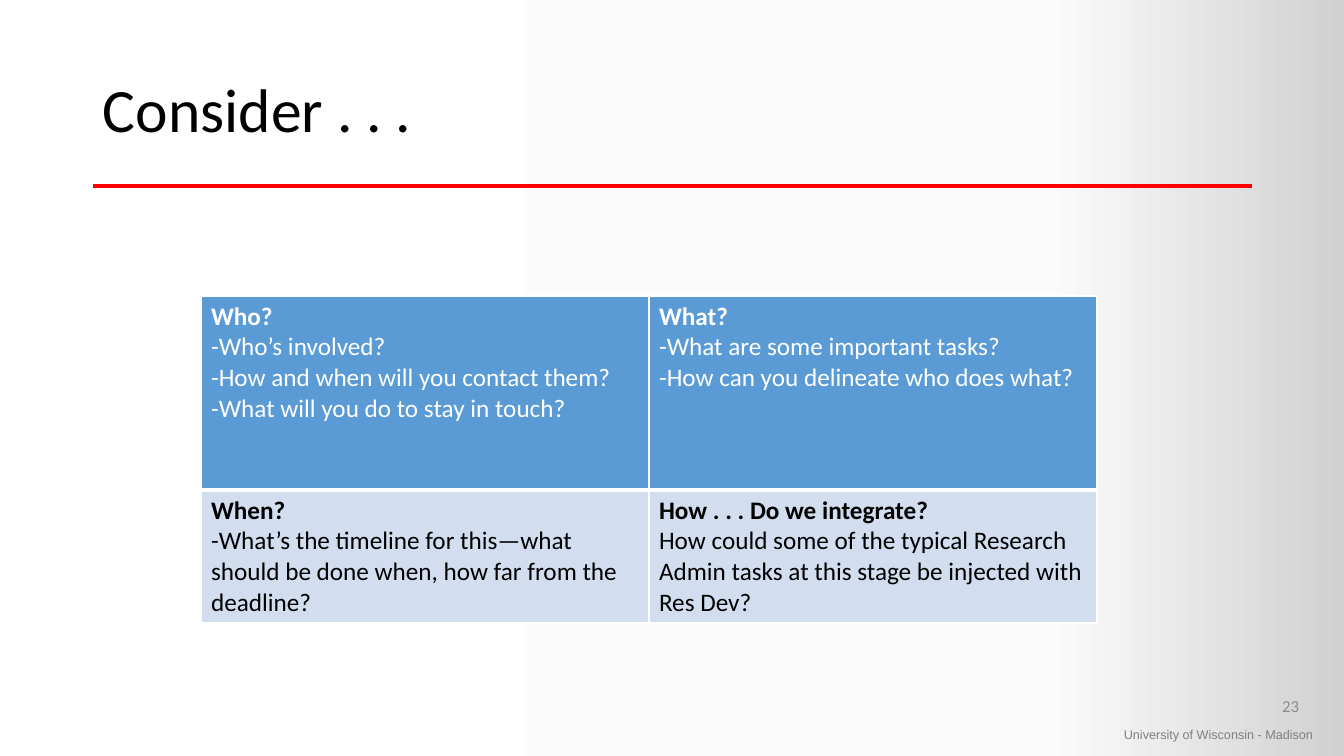
from dataclasses import dataclass

from lxml import etree
from pptx import Presentation
from pptx.dml.color import RGBColor
from pptx.enum.shapes import MSO_CONNECTOR as Connector
from pptx.enum.text import MSO_ANCHOR as Anchor, PP_ALIGN as Align
from pptx.oxml.ns import qn
from pptx.util import Emu, Pt

EMU_PER_PX = 12192000 / 1344


def px(length):
    return Emu(round(length * EMU_PER_PX))


@dataclass(frozen=True)
class Theme:
    black: str = "000000"
    white: str = "FFFFFF"
    red: str = "FF0000"
    footer_grey: str = "808080"
    number_grey: str = "8C8C8C"
    row_fills: tuple = ("5B9BD5", "D2DEEF")
    row_inks: tuple = ("FFFFFF", "000000")
    backdrop: tuple = ((0, "FFFFFF"), (78, "FBFBFB"), (100, "D1D1D1"))
    body_font: str = "Calibri"
    footer_font: str = "Arial"
    title_size: int = 44
    table_size: int = 18
    number_size: int = 12
    footer_size: int = 9


class SlideBuilder:
    def __init__(self, page, theme):
        self.page = page
        self.theme = theme

    def format_font(self, font, color, **values):
        font.color.rgb = RGBColor.from_string(color)
        for name, value in values.items():
            setattr(font, name, value)

    def add_color(self, parent, color):
        etree.SubElement(parent, qn("a:srgbClr"), val=color)

    def backdrop(self):
        fill = self.page.background.fill
        fill.gradient()
        fill.gradient_angle = 0
        stops = self.page.background._cSld.find(".//" + qn("a:gsLst"))
        for stop in list(stops):
            stops.remove(stop)
        for percent, color in self.theme.backdrop:
            stop = etree.SubElement(stops, qn("a:gs"), pos=str(percent * 1000))
            self.add_color(stop, color)

    def text(self, words, area, color, size, font_name=None,
             anchor=Anchor.TOP, **paragraph_format):
        box = self.page.shapes.add_textbox(*map(px, area))
        frame = box.text_frame
        frame.word_wrap = True
        frame.vertical_anchor = anchor
        para = frame.paragraphs[0]
        for name, value in paragraph_format.items():
            setattr(para, name, value)
        span = para.add_run()
        span.text = words
        self.format_font(span.font, color, size=Pt(size),
                         name=font_name or self.theme.body_font)

    def rule(self, start, end, color, width):
        line = self.page.shapes.add_connector(
            Connector.STRAIGHT, *map(px, start + end))
        line.line.color.rgb = RGBColor.from_string(color)
        line.line.width = Pt(width)
        etree.SubElement(line._element.spPr, qn("a:effectLst"))

    def borders(self, cell, widths):
        """Draw white borders, widths in points for left, right, top, bottom."""
        properties = cell._tc.get_or_add_tcPr()
        for index, (side, width) in enumerate(zip("LRTB", widths)):
            border = etree.Element(qn("a:ln" + side), w=str(Pt(width)))
            self.add_color(etree.SubElement(border, qn("a:solidFill")),
                           self.theme.white)
            properties.insert(index, border)

    def table(self, rows, left, top, column_width, row_heights):
        column_count = len(rows[0])
        table = self.page.shapes.add_table(
            len(rows), column_count, px(left), px(top),
            px(column_width * column_count), px(sum(row_heights))).table
        table.first_row = table.horz_banding = False
        for column in table.columns:
            column.width = px(column_width)
        for r, row in enumerate(rows):
            table.rows[r].height = px(row_heights[r])
            widths = (1, 1, 3 if r else 1, 1 if r else 3)
            for c, lines in enumerate(row):
                self.cell(table.cell(r, c), lines, self.theme.row_fills[r],
                          self.theme.row_inks[r], widths)

    def cell(self, cell, lines, fill, ink, border_widths):
        """Fill a cell with a bold heading and the plain lines below it."""
        cell.fill.solid()
        cell.fill.fore_color.rgb = RGBColor.from_string(fill)
        self.borders(cell, border_widths)
        cell.text = "\n".join(lines)
        for index, para in enumerate(cell.text_frame.paragraphs):
            self.format_font(para.runs[0].font, ink, bold=index == 0,
                             size=Pt(self.theme.table_size),
                             name=self.theme.body_font)


QUESTIONS = [
    [
        ["Who?", "-Who’s involved?", "-How and when will you contact them?",
         "-What will you do to stay in touch?"],
        ["What?", "-What are some important tasks?",
         "-How can you delineate who does what?"],
    ],
    [
        ["When?", "-What’s the timeline for this—what should be done when, "
                  "how far from the deadline?"],
        ["How . . . Do we integrate?",
         "How could some of the typical Research Admin tasks at this stage "
         "be injected with Res Dev?"],
    ],
]


def main():
    deck = Presentation()
    deck.slide_width, deck.slide_height = px(1344), px(756)
    theme = Theme()
    slide = SlideBuilder(deck.slides.add_slide(deck.slide_layouts[6]), theme)

    slide.backdrop()
    slide.text("University of Wisconsin - Madison", (1114, 722, 230, 25),
               theme.footer_grey, theme.footer_size, theme.footer_font)
    slide.rule((93, 186), (1252, 186), theme.red, 3)
    slide.text("Consider . . .", (93, 40, 1159, 146), theme.black,
               theme.title_size, anchor=Anchor.MIDDLE, line_spacing=0.9)
    slide.text("23", (1007, 686, 302, 40), theme.number_grey,
               theme.number_size, anchor=Anchor.MIDDLE, alignment=Align.RIGHT)
    slide.table(QUESTIONS, left=201, top=296, column_width=448,
                row_heights=(194, 133))
    deck.save("out.pptx")


if __name__ == "__main__":
    main()
